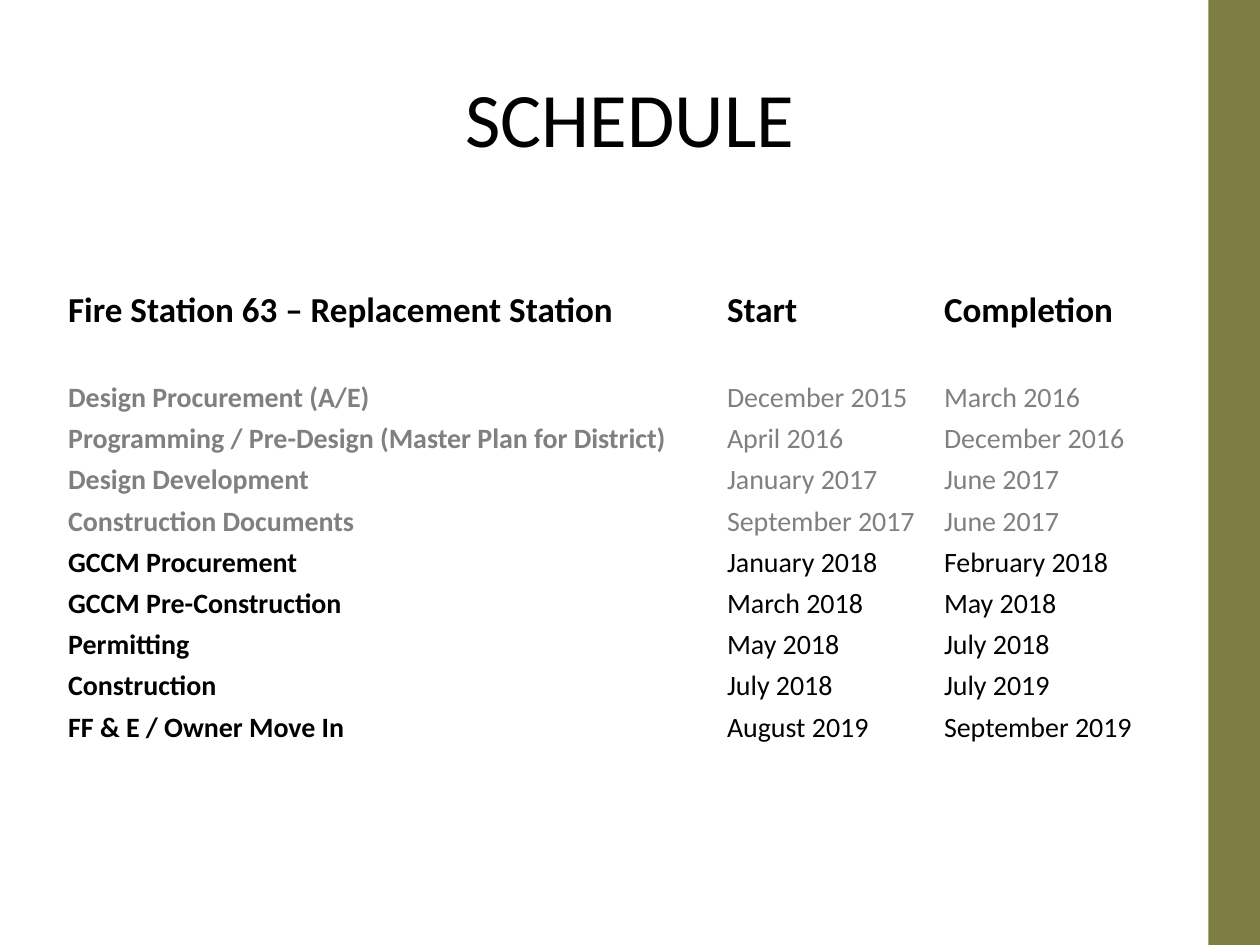
from lxml.etree import SubElement
from pptx import Presentation
from pptx.dml.color import RGBColor
from pptx.enum.shapes import MSO_SHAPE
from pptx.enum.text import MSO_ANCHOR, PP_ALIGN
from pptx.oxml.ns import qn
from pptx.util import Pt

HEADER = ("Fire Station 63 – Replacement Station", "Start", "Completion")
DONE = [
    ("Design Procurement (A/E)", "December 2015", "March 2016"),
    ("Programming / Pre-Design (Master Plan for District)", "April 2016", "December 2016"),
    ("Design Development", "January 2017", "June 2017"),
    ("Construction Documents", "September 2017", "June 2017"),
]
UPCOMING = [
    ("GCCM Procurement", "January 2018", "February 2018"),
    ("GCCM Pre-Construction", "March 2018", "May 2018"),
    ("Permitting", "May 2018", "July 2018"),
    ("Construction", "July 2018", "July 2019"),
    ("FF & E / Owner Move In", "August 2019", "September 2019"),
]
COLUMN_WIDTHS = (376.5, 124, 132.5)


def rgb(value):
    return RGBColor.from_string(value)


class SlideBuilder:
    FONT = "Calibri"
    BLACK, GRAY, WHITE, OLIVE = "000000", "808080", "FFFFFF", "7E7E42"
    TITLE_SIZE, HEADER_SIZE, BODY_SIZE = 44, 20, 16
    HEADER_HEIGHT, ROW_HEIGHT = 28.4, 23.5

    def __init__(self, prs):
        self.s = prs.slides.add_slide(prs.slide_layouts[5])

    def style(self, p, size, color, bold=False):
        font = p.font
        font.name, font.size, font.bold = self.FONT, Pt(size), bold
        font.color.rgb = rgb(color)

    def side_bar(self, left, top, width, height):
        sp = self.s.shapes.add_shape(
            MSO_SHAPE.RECTANGLE, Pt(left), Pt(top), Pt(width), Pt(height))
        sp.shadow.inherit = False
        sp.fill.solid()
        sp.fill.fore_color.rgb = rgb(self.OLIVE)
        sp.line.fill.background()

    def title(self, text, left, top, width, height):
        sp = self.s.shapes.title
        sp.left, sp.top, sp.width, sp.height = Pt(left), Pt(top), Pt(width), Pt(height)
        tf = sp.text_frame
        tf.text = text
        tf.vertical_anchor = MSO_ANCHOR.MIDDLE
        p = tf.paragraphs[0]
        p.alignment = PP_ALIGN.CENTER
        self.style(p, self.TITLE_SIZE, self.BLACK)

    def borders(self, cell, bottom):
        """Draw white cell borders, 1 pt except for the given bottom width."""
        tc_pr = cell._tc.get_or_add_tcPr()
        widths = {"a:lnL": 1, "a:lnR": 1, "a:lnT": 1, "a:lnB": bottom}
        for i, (tag, width) in enumerate(widths.items()):
            ln = SubElement(tc_pr, qn(tag), w=str(Pt(width)))
            fill = SubElement(ln, qn("a:solidFill"))
            SubElement(fill, qn("a:srgbClr"), val=self.WHITE)
            tc_pr.insert(i, ln)

    def cell(self, cell, text, size, color, bold, bottom=1):
        cell.margin_left = cell.margin_right = Pt(3)
        cell.margin_top = cell.margin_bottom = Pt(2)
        cell.fill.background()
        self.borders(cell, bottom)
        p = cell.text_frame.paragraphs[0]
        if text:
            p.text = text
        self.style(p, size, color, bold)

    def schedule(self, left, top, header, done, upcoming):
        rows = [header, ("",) * len(header), *done, *upcoming]
        height = self.HEADER_HEIGHT + self.ROW_HEIGHT * (len(rows) - 1)
        table = self.s.shapes.add_table(
            len(rows), len(header), Pt(left), Pt(top),
            Pt(sum(COLUMN_WIDTHS)), Pt(height)).table
        table.horz_banding = False
        for column, width in zip(table.columns, COLUMN_WIDTHS):
            column.width = Pt(width)
        for i, row in enumerate(rows):
            is_header = i == 0
            table.rows[i].height = Pt(self.HEADER_HEIGHT if is_header else self.ROW_HEIGHT)
            size = self.HEADER_SIZE if is_header else self.BODY_SIZE
            color = self.GRAY if row in done else self.BLACK
            for j, text in enumerate(row):
                self.cell(table.cell(i, j), text, size, color,
                          bold=is_header or j == 0, bottom=3 if is_header else 1)


def main():
    prs = Presentation()
    prs.slide_width, prs.slide_height = Pt(720), Pt(540)
    slide = SlideBuilder(prs)
    slide.side_bar(690.5, 0, 29.5, 540)
    slide.title("SCHEDULE", 36, 21.6, 648, 90)
    slide.schedule(36, 163.5, HEADER, DONE, UPCOMING)
    prs.save("out.pptx")


if __name__ == "__main__":
    main()
